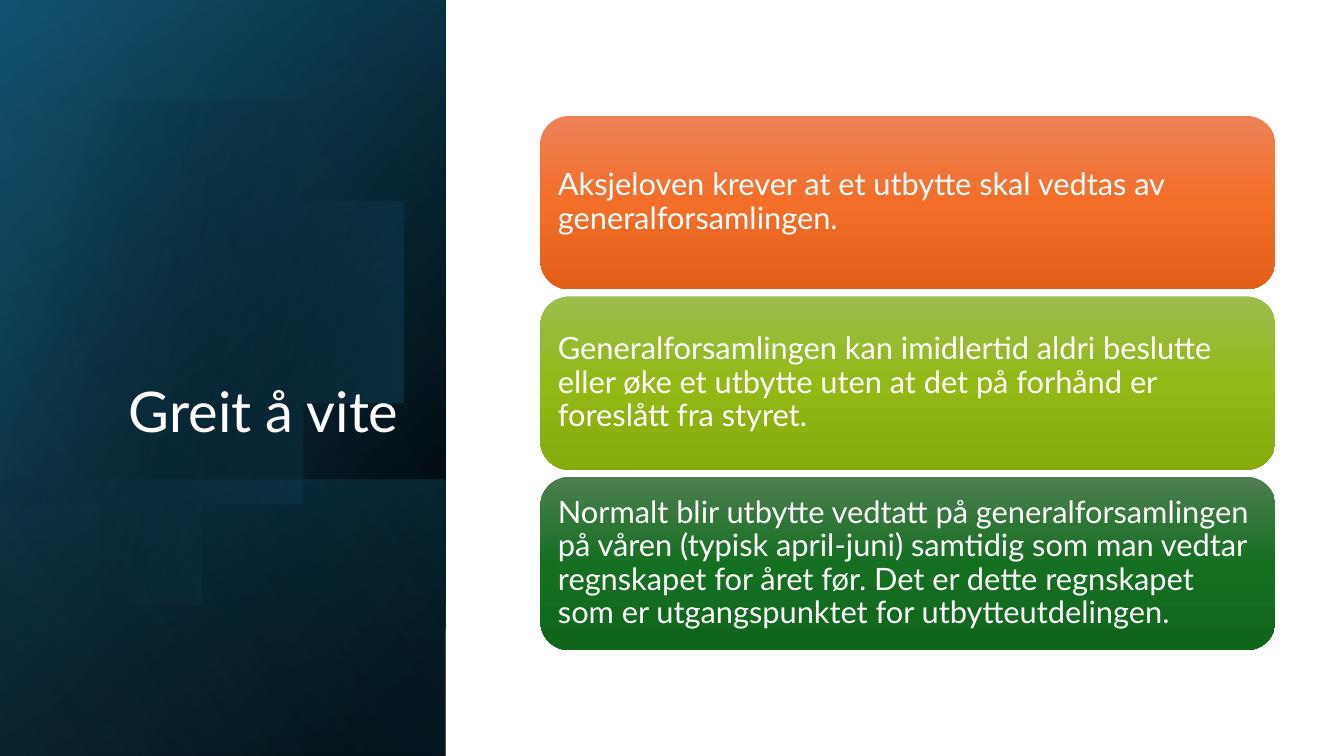
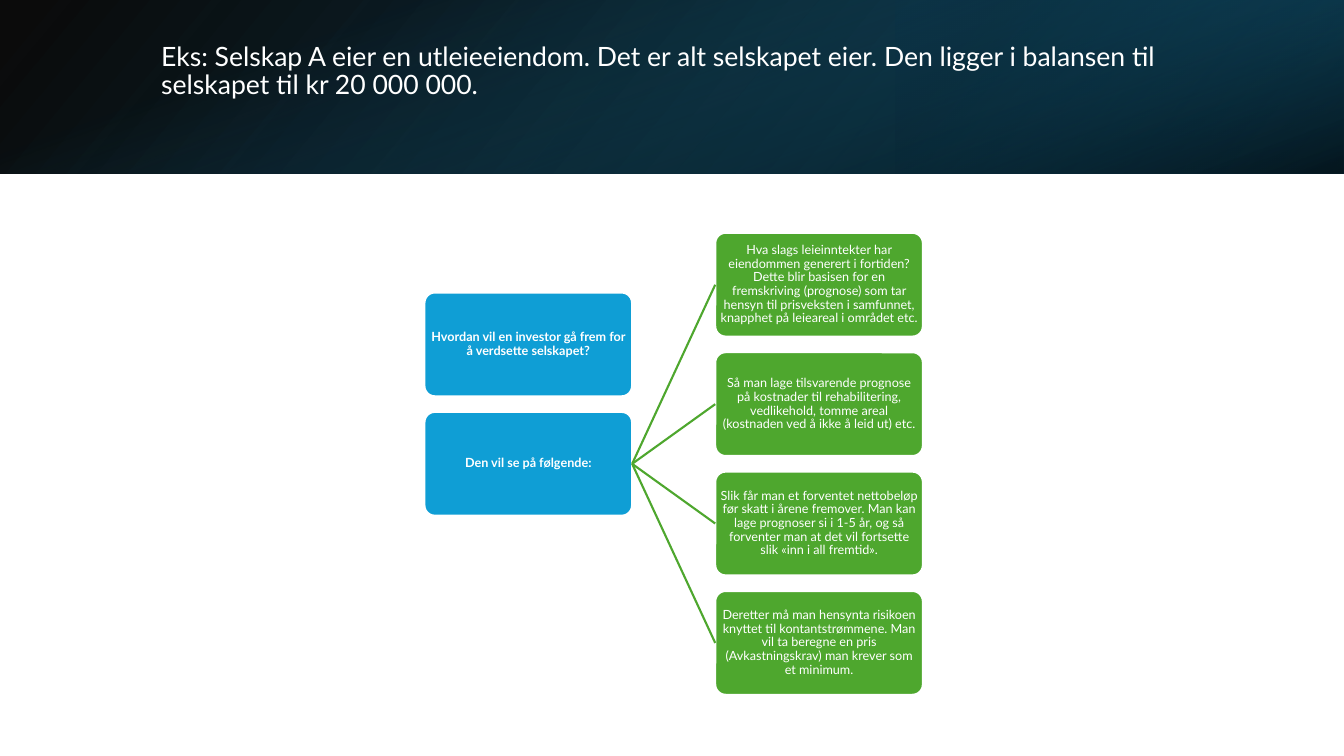
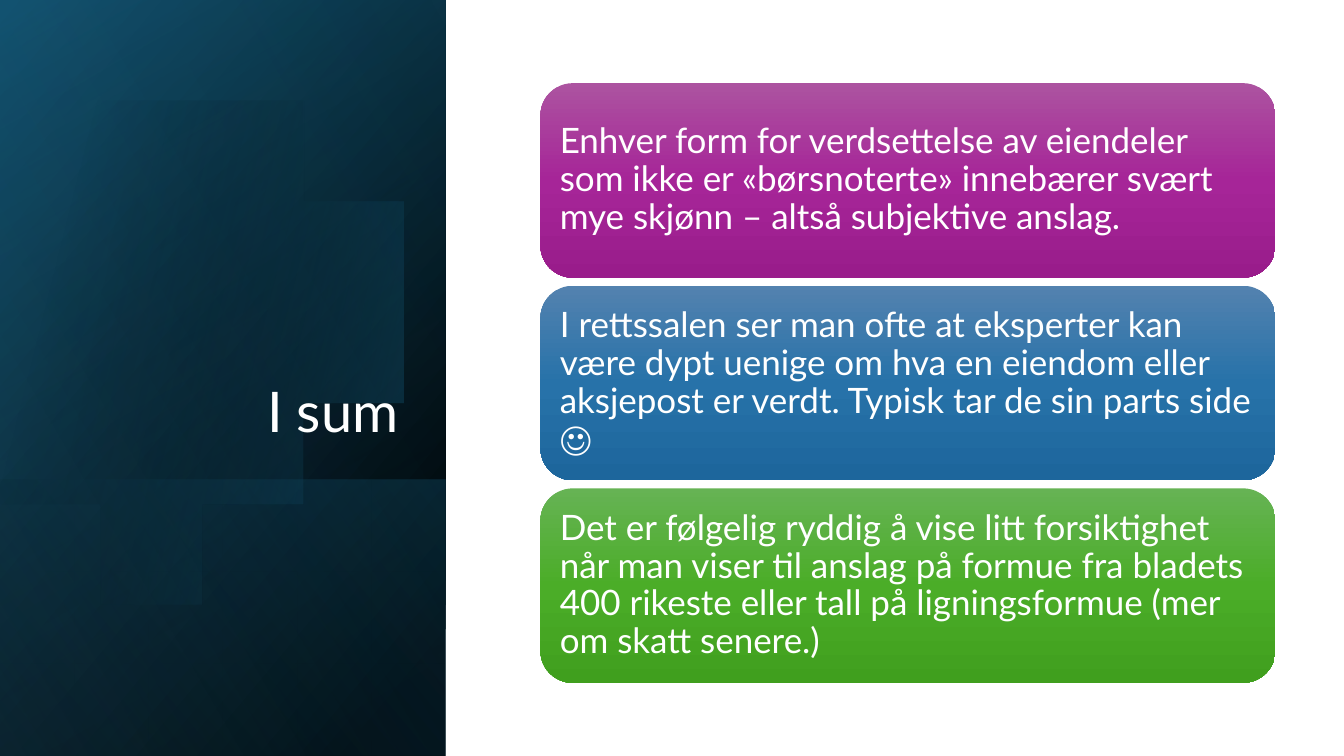
"""Build three slides on dividends and company valuation."""
from dataclasses import dataclass
from math import cos, radians, sin

from lxml.etree import SubElement
from pptx import Presentation
from pptx.dml.color import RGBColor
from pptx.enum.shapes import MSO_CONNECTOR, MSO_SHAPE
from pptx.enum.text import MSO_ANCHOR as ANCHOR, PP_ALIGN as ALIGN
from pptx.oxml.ns import qn
from pptx.util import Inches, Pt

WIDTH, HEIGHT = 13.33, 7.5
PANEL_W, BAND_H = 4.42, 1.72
FONT = "Lato"
WHITE, BLACK, NAVY, TEAL, SKY = "FFFFFF", "000000", "104862", "156082", "46B1E1"
BLUE, GREEN = "0F9ED5", "4EA72E"


@dataclass(frozen=True)
class Stop:
    """Gradient stop: position and opacity in percent."""
    pos: int
    color: str
    opacity: int = 100


@dataclass(frozen=True)
class Layer:
    """Gradient rectangle: left, top, width, height, angle and stops."""
    box: tuple[float, float, float, float]
    angle: int
    stops: tuple[Stop, ...]


@dataclass(frozen=True)
class Style:
    """Text settings of a box."""
    size: float
    bold: bool = False
    align: ALIGN = ALIGN.LEFT
    anchor: ANCHOR = ANCHOR.MIDDLE
    inset: tuple[float, float] = (0.1, 0.05)


@dataclass(frozen=True)
class Card:
    """Rounded card: text with top, middle and bottom colours."""
    text: str
    colors: tuple[str, str, str]


@dataclass(frozen=True)
class Node:
    """Tree box: text, grid column and row."""
    text: str
    col: int
    row: float


PANEL = (0, 0, PANEL_W, HEIGHT)
PANEL_BACK = (
    Layer(PANEL, 220, (Stop(8, BLACK), Stop(100, NAVY))),
    Layer(PANEL, 240, (Stop(0, BLACK, 0), Stop(99, TEAL, 46))),
    Layer((0, 4.76, PANEL_W, HEIGHT - 4.76), 140,
          (Stop(2, TEAL, 29), Stop(100, BLACK, 30))),
)
PANEL_GLOW = Layer(PANEL, 150, (Stop(0, BLACK, 0), Stop(99, SKY, 11)))
DISC_STOPS = (Stop(18, BLACK, 0), Stop(100, TEAL, 43))
BAND = (
    Layer((0, 0, WIDTH, BAND_H), 40, (Stop(0, BLACK, 96), Stop(100, NAVY))),
    Layer((WIDTH * 2 / 3, 0, WIDTH / 3, BAND_H), 40,
          (Stop(19, "0B3041", 68), Stop(100, TEAL, 79))),
    Layer((0, 0, WIDTH, BAND_H), 70, (Stop(23, TEAL, 0), Stop(99, BLACK, 74))),
)

FACTS = (
    Card("Aksjeloven krever at et utbytte skal vedtas av generalforsamlingen.",
         ("ED8257", "F26E29", "E25F1A")),
    Card("Generalforsamlingen kan imidlertid aldri beslutte eller øke et utbytte "
         "uten at det på forhånd er foreslått fra styret.",
         ("9CBD4E", "92B916", "85AB0D")),
    Card("Normalt blir utbytte vedtatt på generalforsamlingen på våren (typisk "
         "april-juni) samtidig som man vedtar regnskapet for året før. Det er dette "
         "regnskapet som er utgangspunktet for utbytteutdelingen.",
         ("4D7E50", "156F21", "0F661B")),
)
SUMMARY = (
    Card("Enhver form for verdsettelse av eiendeler som ikke er «børsnoterte» "
         "innebærer svært mye skjønn – altså subjektive anslag.",
         ("AC53A0", "A62598", "991C8B")),
    Card("I rettssalen ser man ofte at eksperter kan være dypt uenige om hva en "
         "eiendom eller aksjepost er verdt. Typisk tar de sin parts side ☺",
         ("5382AF", "2772A9", "1D669C")),
    Card("Det er følgelig ryddig å vise litt forsiktighet når man viser til anslag "
         "på formue fra bladets 400 rikeste eller tall på ligningsformue (mer om "
         "skatt senere.)",
         ("66B354", "4BAD28", "409F1E")),
)
QUESTIONS = (
    Node("Hvordan vil en investor gå frem for å verdsette selskapet?", 0, 0.5),
    Node("Den vil se på følgende:", 0, 1.5),
)
STEPS = (
    Node("Hva slags leieinntekter har eiendommen generert i fortiden? Dette blir "
         "basisen for en fremskriving (prognose) som tar hensyn til prisveksten i "
         "samfunnet, knapphet på leieareal i området etc.", 1, 0),
    Node("Så man lage tilsvarende prognose på kostnader til rehabilitering, "
         "vedlikehold, tomme areal (kostnaden ved å ikke å leid ut) etc.", 1, 1),
    Node("Slik får man et forventet nettobeløp før skatt i årene fremover. Man kan "
         "lage prognoser si i 1-5 år, og så forventer man at det vil fortsette slik "
         "«inn i all fremtid».", 1, 2),
    Node("Deretter må man hensynta risikoen knyttet til kontantstrømmene. Man vil ta "
         "beregne en pris (Avkastningskrav) man krever som et minimum.", 1, 3),
)


def rgb(color: str) -> RGBColor:
    """Turn a hex string into a colour."""
    return RGBColor.from_string(color)


def fill_gradient(sp, angle: int, stops: tuple[Stop, ...]) -> None:
    """Fill a shape with a linear gradient, angle clockwise, and no outline."""
    sp.shadow.inherit = False
    sp.line.fill.background()
    sp.fill.gradient()
    sp.fill.gradient_angle = 360 - angle
    stop_list = next(sp.element.iter(qn("a:gsLst")))
    for old in list(stop_list):
        stop_list.remove(old)
    for stop in stops:
        gs = SubElement(stop_list, qn("a:gs"), pos=str(stop.pos * 1000))
        clr = SubElement(gs, qn("a:srgbClr"), val=stop.color)
        if stop.opacity < 100:
            SubElement(clr, qn("a:alpha"), val=str(stop.opacity * 1000))


def add_box(slide, preset: MSO_SHAPE, *box: float):
    """Add a preset shape, lengths in inches."""
    return slide.shapes.add_shape(preset, *map(Inches, box))


def add_layer(slide, layer: Layer) -> None:
    """Draw one gradient rectangle."""
    fill_gradient(add_box(slide, MSO_SHAPE.RECTANGLE, *layer.box),
                  layer.angle, layer.stops)


def add_disc(slide) -> None:
    """Draw the soft disc cut off by the left slide edge."""
    cx, cy, radius = 1.45, 3.38, 2.28
    arc = [(cx + radius * cos(radians(a)), cy + radius * sin(radians(a)))
           for a in range(-129, 130, 3)]
    builder = slide.shapes.build_freeform(*arc[0], scale=Inches(1))
    builder.add_line_segments(arc[1:], close=True)
    fill_gradient(builder.convert_to_shape(), 14, DISC_STOPS)


def write(sp, text: str, style: Style) -> None:
    """Write white text into a shape."""
    tf = sp.text_frame
    tf.word_wrap = True
    tf.vertical_anchor = style.anchor
    tf.margin_left = tf.margin_right = Inches(style.inset[0])
    tf.margin_top = tf.margin_bottom = Inches(style.inset[1])
    p = tf.paragraphs[0]
    p.text = text
    p.alignment = style.align
    p.line_spacing = 0.9
    p.font.name = FONT
    p.font.size = Pt(style.size)
    p.font.bold = style.bold
    p.font.color.rgb = rgb(WHITE)


def add_title(slide, text: str, style: Style, *box: float) -> None:
    """Add a slide title."""
    write(slide.shapes.add_textbox(*map(Inches, box)), text, style)


def card_slide(prs, title: str, cards: tuple[Card, ...], height: float,
               gap: float, style: Style) -> None:
    """Build a slide with a dark side panel and a centred stack of cards."""
    slide = prs.slides.add_slide(prs.slide_layouts[6])
    for layer in PANEL_BACK:
        add_layer(slide, layer)
    add_disc(slide)
    add_layer(slide, PANEL_GLOW)
    add_title(slide, title, Style(40, align=ALIGN.RIGHT, anchor=ANCHOR.BOTTOM),
              0.64, 1.84, 3.41, 2.62)
    pitch = height + gap
    top = 3.8 - (len(cards) * pitch - gap) / 2
    for i, card in enumerate(cards):
        sp = add_box(slide, MSO_SHAPE.ROUNDED_RECTANGLE,
                     5.36, top + i * pitch, 7.29, height)
        fill_gradient(sp, 90, tuple(map(Stop, (0, 50, 100), card.colors)))
        write(sp, card.text, style)


def add_node(slide, node: Node, color: str, bold: bool):
    """Draw one box of the tree on its grid."""
    w, h = 2.06, 1.03
    sp = add_box(slide, MSO_SHAPE.ROUNDED_RECTANGLE,
                 4.21 + node.col * w * 1.4, 2.31 + node.row * h * 1.15, w, h)
    sp.adjustments[0] = 0.1
    sp.shadow.inherit = False
    sp.fill.solid()
    sp.fill.fore_color.rgb = rgb(color)
    sp.line.color.rgb = rgb(WHITE)
    sp.line.width = Pt(1.5)
    write(sp, node.text, Style(9, bold, ALIGN.CENTER, inset=(0.01, 0.01)))
    return sp


def connect(slide, start, end) -> None:
    """Join the right side of one box to the left side of another."""
    line = slide.shapes.add_connector(MSO_CONNECTOR.STRAIGHT, 0, 0, 0, 0)
    line.begin_connect(start, 3)
    line.end_connect(end, 1)
    line.line.color.rgb = rgb(GREEN)
    line.line.width = Pt(1.5)
    SubElement(line.element.spPr, qn("a:effectLst"))


def tree_slide(prs) -> None:
    """Build the valuation example with its tree."""
    slide = prs.slides.add_slide(prs.slide_layouts[6])
    for layer in BAND:
        add_layer(slide, layer)
    add_title(slide, "Eks: Selskap A eier en utleieeiendom. Det er alt selskapet eier. "
              "Den ligger i balansen til selskapet til kr 20 000 000.",
              Style(19, anchor=ANCHOR.TOP), 1.5, 0.38, 10.98, 0.96)
    roots = [add_node(slide, node, BLUE, True) for node in QUESTIONS]
    for node in STEPS:
        connect(slide, roots[-1], add_node(slide, node, GREEN, False))


def main() -> None:
    """Build and save the presentation."""
    prs = Presentation()
    prs.slide_width, prs.slide_height = Inches(WIDTH), Inches(HEIGHT)
    card_slide(prs, "Greit å vite", FACTS, 1.72, 0.07, Style(22, inset=(0.09, 0.09)))
    tree_slide(prs)
    card_slide(prs, "I sum", SUMMARY, 1.93, 0.08, Style(25, inset=(0.1, 0.1)))
    prs.save("out.pptx")


if __name__ == "__main__":
    main()
